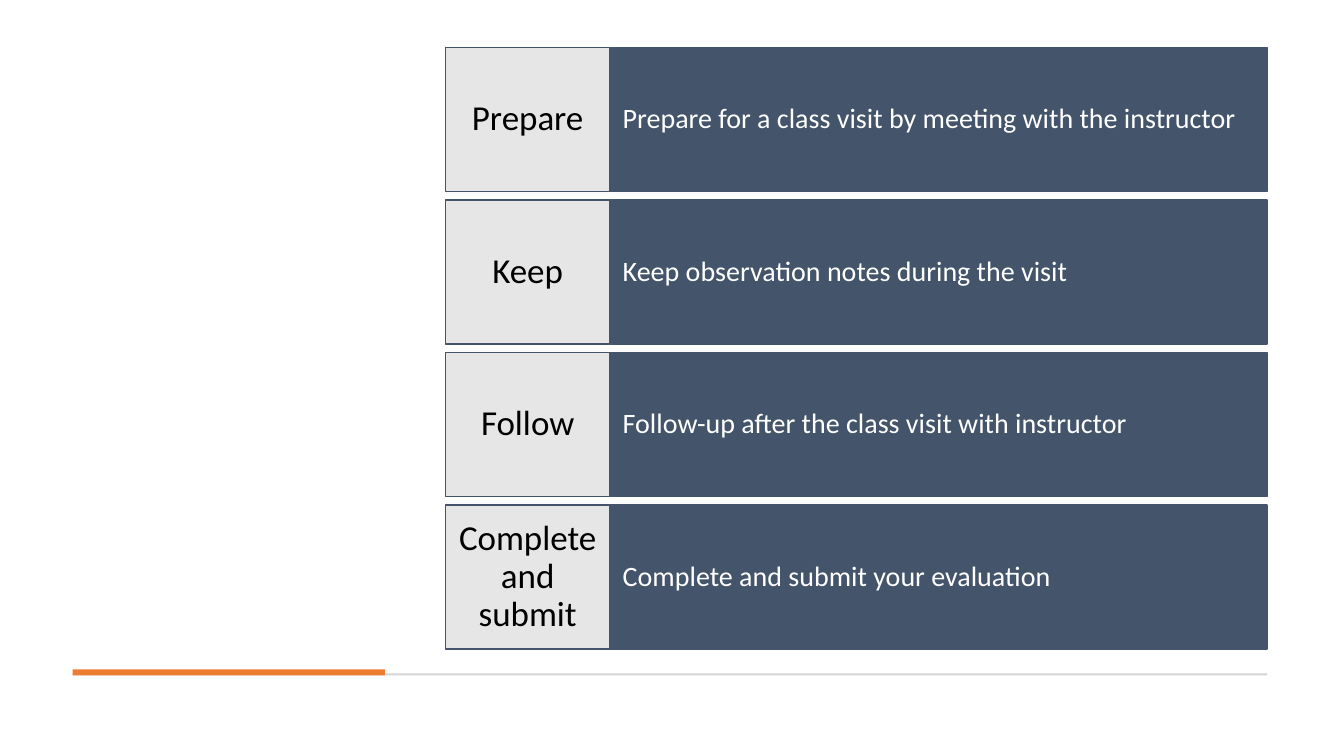
import pptx
import pptx.util
import pptx.dml.color
import pptx.enum.shapes
import pptx.enum.text
from dataclasses import dataclass

Pt = pptx.util.Pt
Align = pptx.enum.text.PP_ALIGN


@dataclass(frozen=True)
class Theme:
    font: str = "Calibri"
    label_size: float = 25
    detail_size: float = 20
    slate: str = "44546A"
    pale: str = "E7E6E6"
    rule: str = "D5D5D5"
    accent: str = "ED7D31"
    white: str = "FFFFFF"
    black: str = "000000"


theme = Theme()


def add_box(left, top, width, height, fill, line=None):
    box = page.shapes.add_shape(
        pptx.enum.shapes.MSO_SHAPE.RECTANGLE, Pt(left), Pt(top), Pt(width), Pt(height))
    box.shadow.inherit = False
    box.fill.solid()
    box.fill.fore_color.rgb = pptx.dml.color.RGBColor.from_string(fill)
    if line:
        box.line.color.rgb = pptx.dml.color.RGBColor.from_string(line)
        box.line.width = Pt(1)
    else:
        box.line.fill.background()
    return box


def write_text(box, text, size, color, align, inset_x, inset_y):
    frame = box.text_frame
    frame.text = text
    frame.word_wrap = True
    frame.vertical_anchor = pptx.enum.text.MSO_ANCHOR.MIDDLE
    frame.margin_left = frame.margin_right = Pt(inset_x)
    frame.margin_top = frame.margin_bottom = Pt(inset_y)
    para = frame.paragraphs[0]
    para.alignment = align
    para.line_spacing = 0.9
    span = para.runs[0]
    span.font.name = theme.font
    span.font.size = Pt(size)
    span.font.color.rgb = pptx.dml.color.RGBColor.from_string(color)


deck = pptx.Presentation()
deck.slide_width = Pt(960)
deck.slide_height = Pt(540)
page = deck.slides.add_slide(deck.slide_layouts[6])

# Footer rule with its accent bar
add_box(51.84, 481, 853.2, 1.44, theme.rule)
add_box(51.84, 478.1, 223.2, 4.32, theme.accent)

# Steps: a label and its detail in each row
steps = [
    ("Prepare", "Prepare for a class visit by meeting with the instructor"),
    ("Keep", "Keep observation notes during the visit"),
    ("Follow", "Follow-up after the class visit with instructor"),
    ("Complete and submit", "Complete and submit your evaluation"),
]
label_left, label_width, detail_width = 318.25, 117.35, 469.4
first_top, row_height, row_pitch = 33.84, 102.9, 109

for index, (label, detail) in enumerate(steps):
    top = first_top + index * row_pitch
    detail_box = add_box(label_left + label_width, top, detail_width, row_height,
                         theme.slate, theme.slate)
    write_text(detail_box, detail, theme.detail_size, theme.white, Align.LEFT, 9.2, 26)
    label_box = add_box(label_left, top, label_width, row_height, theme.pale, theme.slate)
    write_text(label_box, label, theme.label_size, theme.black, Align.CENTER, 6.2, 10.2)

deck.save("out.pptx")
